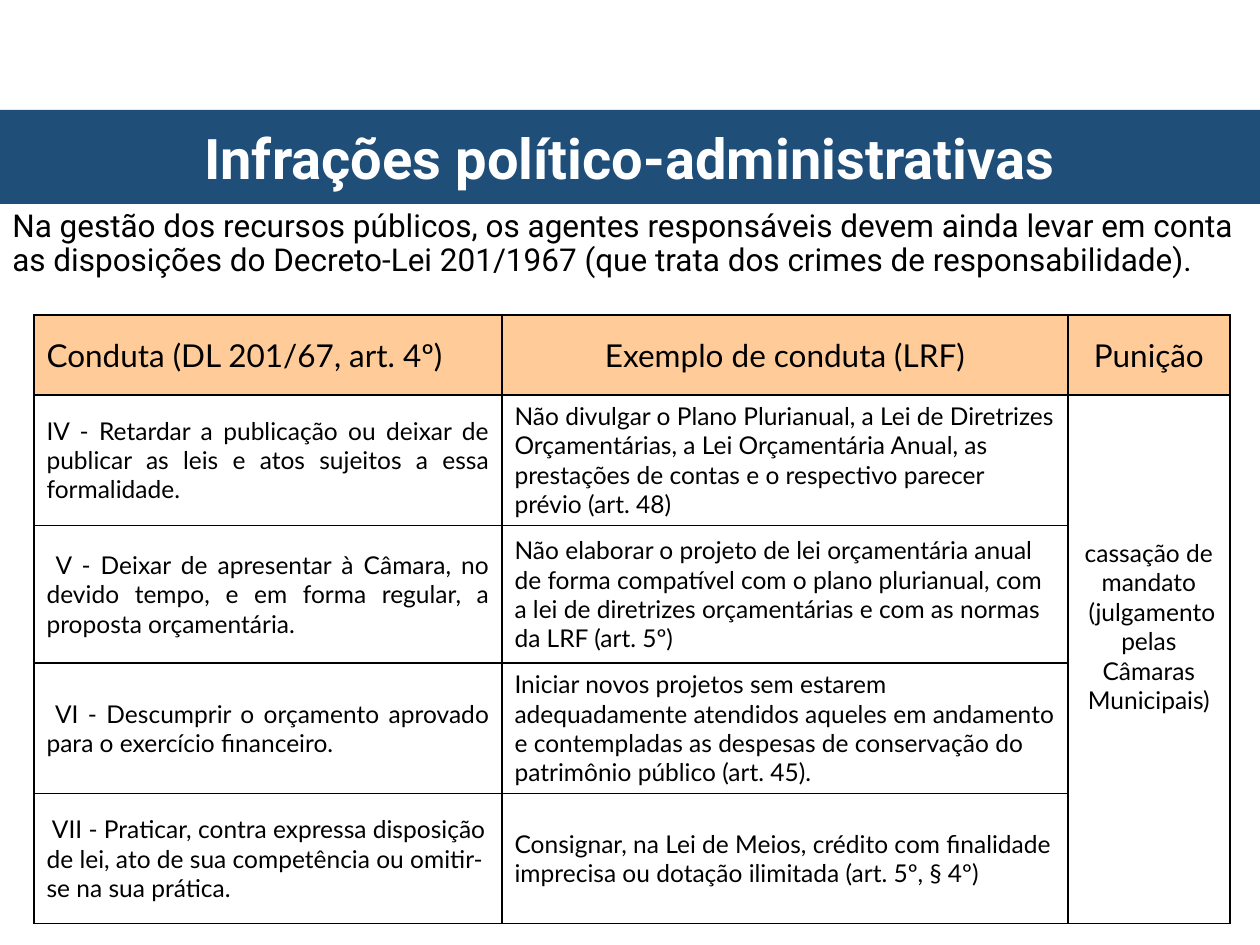
from lxml import etree
from pptx import Presentation
from pptx.dml.color import RGBColor
from pptx.enum.shapes import MSO_SHAPE
from pptx.enum.text import MSO_ANCHOR, PP_ALIGN
from pptx.oxml.ns import qn
from pptx.util import Pt

SCALE = 914400 / 126
LEFT, MID, JUST = PP_ALIGN.LEFT, PP_ALIGN.CENTER, PP_ALIGN.JUSTIFY
CENTER, TOP = MSO_ANCHOR.MIDDLE, MSO_ANCHOR.TOP
RECT = MSO_SHAPE.RECTANGLE
COLORS = {"band": "1F4E79", "head": "FFCC99", "white": "FFFFFF", "black": "000000"}

TITLE = "Infrações político-administrativas"
INTRO = (
    "Na gestão dos recursos públicos, os agentes responsáveis devem ainda levar em conta "
    "as disposições do Decreto-Lei 201/1967 (que trata dos crimes de responsabilidade)."
)
COLS = [468, 566, 162]
ROWS = [80, 130, 138, 130, 130]
HEADS = [
    ("Conduta (DL 201/67, art. 4º)", JUST),
    ("Exemplo de conduta (LRF)", MID),
    ("Punição", MID),
]
CASES = [
    ("IV - Retardar a publicação ou deixar de publicar as leis e atos sujeitos a essa "
     "formalidade.", JUST,
     "Não divulgar o Plano Plurianual, a Lei de Diretrizes Orçamentárias, a Lei "
     "Orçamentária Anual, as prestações de contas e o respectivo parecer prévio (art. 48)"),
    (" V - Deixar de apresentar à Câmara, no devido tempo, e em forma regular, a "
     "proposta orçamentária.", JUST,
     "Não elaborar o projeto de lei orçamentária anual de forma compatível com o plano "
     "plurianual, com a lei de diretrizes orçamentárias e com as normas da LRF (art. 5º)"),
    (" VI - Descumprir o orçamento aprovado para o exercício financeiro.", JUST,
     "Iniciar novos projetos sem estarem adequadamente atendidos aqueles em andamento e "
     "contempladas as despesas de conservação do patrimônio público (art. 45)."),
    (" VII - Praticar, contra expressa disposição de lei, ato de sua competência ou "
     "omitir-se na sua prática.", LEFT,
     "Consignar, na Lei de Meios, crédito com finalidade imprecisa ou dotação ilimitada "
     "(art. 5º, § 4º)"),
]
PENALTY = "cassação de mandato\n (julgamento pelas Câmaras Municipais)"


def px(n):
    return round(n * SCALE)


def rgb(name):
    return RGBColor.from_string(COLORS[name])


def write(frame, text, size, face, align, color="black", bold=False):
    frame.text = text
    for par in frame.paragraphs:
        par.alignment = align
        font = par.font
        font.size, font.name, font.bold = Pt(size), face, bold
        font.color.rgb = rgb(color)


def add_band(slide):
    band = slide.shapes.add_shape(RECT, 0, px(110), px(1260), px(94))
    band.shadow.inherit = False
    band.fill.solid()
    band.fill.fore_color.rgb = rgb("band")
    band.line.fill.background()
    band.text_frame.vertical_anchor = CENTER
    write(band.text_frame, TITLE, 32, "Roboto", MID, "white", True)


def add_intro(slide):
    frame = slide.shapes.add_textbox(0, px(204), px(1260), px(146)).text_frame
    frame.word_wrap = True
    frame.vertical_anchor = TOP
    write(frame, INTRO, 18, "Roboto", LEFT)
    frame.paragraphs[0].line_spacing = 0.9


def style(cell, fill):
    """Draw the four borders, then fill the cell; the schema wants that order."""
    props = cell._tc.get_or_add_tcPr()
    for side in ("lnL", "lnR", "lnT", "lnB"):
        line = etree.SubElement(props, qn("a:" + side), w=str(Pt(1)))
        solid = etree.SubElement(line, qn("a:solidFill"))
        etree.SubElement(solid, qn("a:srgbClr"), val=COLORS["black"])
    cell.fill.solid()
    cell.fill.fore_color.rgb = rgb(fill)
    cell.vertical_anchor = CENTER


def add_grid(slide):
    grid = slide.shapes.add_table(
        len(ROWS), len(COLS), px(34), px(315), px(sum(COLS)), px(sum(ROWS))
    ).table
    grid.first_row = grid.horz_banding = False
    for col, width in zip(grid.columns, COLS):
        col.width = px(width)
    for row, height in zip(grid.rows, ROWS):
        row.height = px(height)

    grid.cell(1, 2).merge(grid.cell(len(CASES), 2))
    for i, row in enumerate(grid.rows):
        for cell in row.cells:
            style(cell, "white" if i else "head")

    for j, (text, align) in enumerate(HEADS):
        write(grid.cell(0, j).text_frame, text, 18, "Lato", align)
    for i, (act, align, sample) in enumerate(CASES, 1):
        write(grid.cell(i, 0).text_frame, act, 14, "Lato", align)
        write(grid.cell(i, 1).text_frame, sample, 14, "Lato", LEFT)
    last = grid.cell(1, 2)
    write(last.text_frame, PENALTY, 14, "Lato", MID)
    last.margin_bottom = px(72)


def main():
    deck = Presentation()
    deck.slide_width, deck.slide_height = px(1260), px(945)
    slide = deck.slides.add_slide(deck.slide_layouts[6])
    add_intro(slide)
    add_grid(slide)
    add_band(slide)
    deck.save("out.pptx")


if __name__ == "__main__":
    main()
